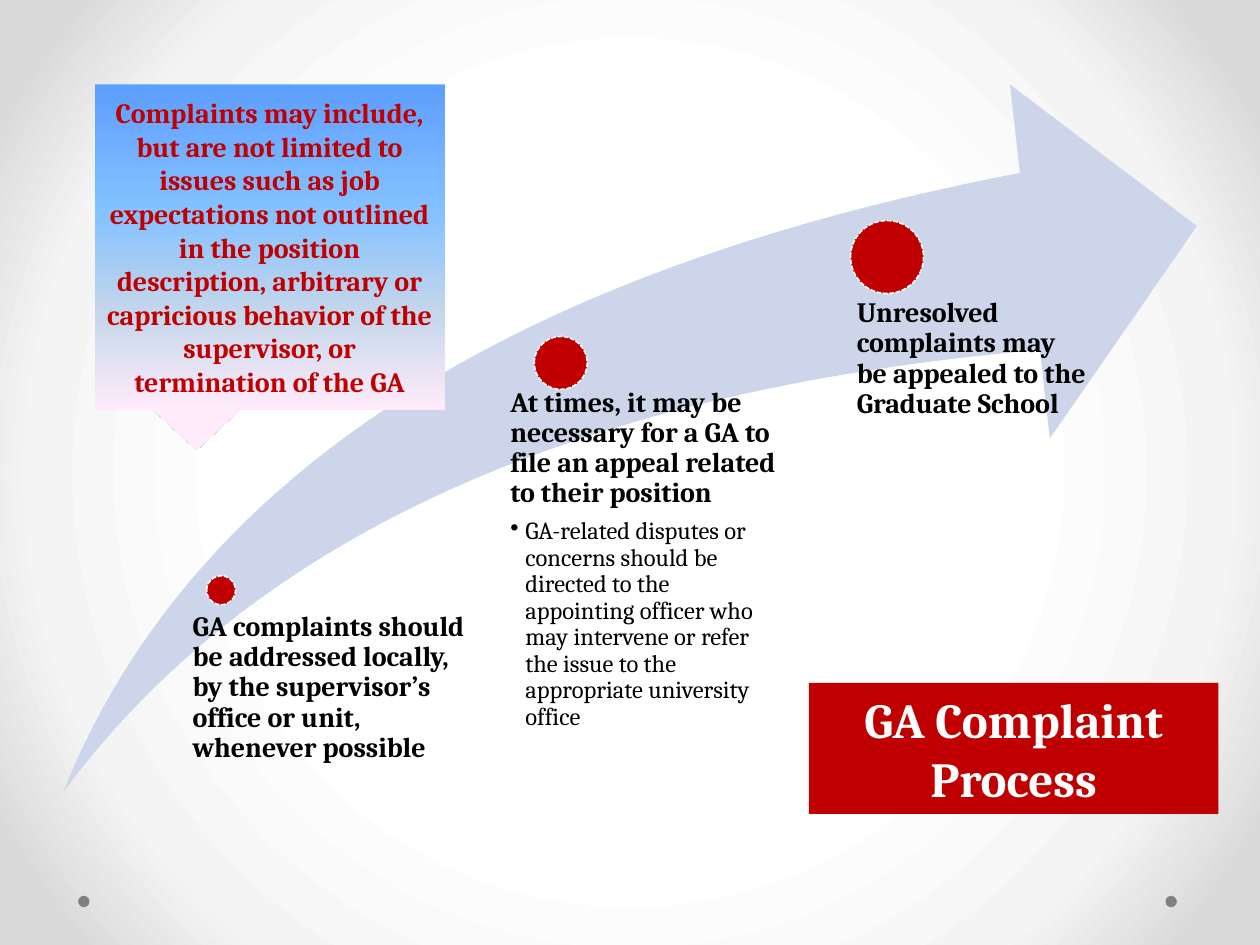
from lxml import etree
from pptx import Presentation
from pptx.dml.color import RGBColor
from pptx.enum.dml import MSO_LINE
from pptx.enum.shapes import MSO_SHAPE as Preset
from pptx.enum.text import MSO_ANCHOR as Anchor, MSO_AUTO_SIZE as AutoSize, PP_ALIGN as Align
from pptx.oxml.ns import qn
from pptx.util import Inches, Pt

RED = RGBColor(0xC0, 0x00, 0x00)
WHITE = RGBColor(0xFF, 0xFF, 0xFF)
BLACK = RGBColor(0x00, 0x00, 0x00)
GRAY = RGBColor(0x80, 0x80, 0x80)
PALE_BLUE = RGBColor(0xCC, 0xD5, 0xEA)
BACKDROP = [(50, WHITE), (76, RGBColor(0xF4, 0xF4, 0xF4)), (92, RGBColor(0xDA, 0xDA, 0xDA))]
SKY = [(0, RGBColor(0x5E, 0x9E, 0xFF)), (40, RGBColor(0x85, 0xC2, 0xFF)),
       (70, RGBColor(0xC4, 0xD6, 0xEB)), (100, RGBColor(0xFF, 0xEB, 0xFA))]


def add_run(paragraph, text, size, color, bold=True):
    run = paragraph.add_run()
    run.text = text
    run.font.name = "Cambria"
    run.font.size = Pt(size)
    run.font.bold = bold
    run.font.color.rgb = color


def make_gradient(solid, stops):
    gradient = etree.Element(qn("a:gradFill"), rotWithShape="1")
    stop_list = etree.SubElement(gradient, qn("a:gsLst"))
    for position, color in stops:
        stop = etree.SubElement(stop_list, qn("a:gs"), pos=str(position * 1000))
        etree.SubElement(stop, qn("a:srgbClr"), val=str(color))
    solid.getparent().replace(solid, gradient)
    return gradient


prs = Presentation()
prs.slide_width, prs.slide_height = Inches(10), Inches(7.5)
slide = prs.slides.add_slide(prs.slide_layouts[5])
shapes = slide.shapes

slide.background.fill.solid()
backdrop = make_gradient(slide.element.find(".//" + qn("a:solidFill")), BACKDROP)
circle = etree.SubElement(backdrop, qn("a:path"), path="circle")
etree.SubElement(circle, qn("a:fillToRect"), l="50000", t="50000", r="50000", b="50000")

for left in (9.25, 0.62):
    corner_dot = shapes.add_shape(Preset.OVAL, Inches(left), Inches(7.11), Inches(0.09), Inches(0.09))
    corner_dot.shadow.inherit = False
    corner_dot.fill.solid()
    corner_dot.fill.fore_color.rgb = GRAY
    corner_dot.line.fill.background()

swoosh = shapes.add_shape(Preset.SWOOSH_ARROW, Inches(0.5), Inches(0.67), Inches(9), Inches(5.62))
swoosh.adjustments[0] = 0.25
swoosh.adjustments[1] = 0.25
swoosh.shadow.inherit = False
swoosh.fill.solid()
swoosh.fill.fore_color.rgb = PALE_BLUE
swoosh.line.fill.background()

steps = [
    ((1.64, 4.57, 0.23), (1.41, 4.86, 2.34, 1.3), 0.12,
     "GA complaints should be addressed locally, by the supervisor’s office or unit, "
     "whenever possible", None),
    ((4.24, 2.67, 0.42), (3.83, 3.08, 2.33, 3.4), 0.22,
     "At times, it may be necessary for a GA to file an appeal related to their position",
     "GA-related disputes or concerns should be directed to the appointing officer who may "
     "intervene or refer the issue to the appropriate university office"),
    ((6.75, 1.75, 0.58), (6.49, 2.37, 2.16, 1.71), 0.31,
     "Unresolved complaints may be appealed to the Graduate School", None),
]
for (left, top, size), text_box, inset, heading, detail in steps:
    marker = shapes.add_shape(Preset.OVAL, Inches(left), Inches(top), Inches(size), Inches(size))
    marker.shadow.inherit = False
    marker.fill.solid()
    marker.fill.fore_color.rgb = RED
    marker.line.color.rgb = WHITE
    marker.line.width = Pt(0.9)
    marker.line.dash_style = MSO_LINE.SQUARE_DOT

    frame = shapes.add_textbox(*[Inches(length) for length in text_box]).text_frame
    frame.word_wrap = True
    frame.margin_left = Inches(inset)
    frame.margin_top = frame.margin_right = frame.margin_bottom = 0
    step = frame.paragraphs[0]
    step.line_spacing = 0.9
    step.space_after = Pt(5.6)
    add_run(step, heading, 16, BLACK)
    if detail:
        bullet = frame.add_paragraph()
        bullet.level = 1
        bullet.line_spacing = 0.9
        bullet.space_after = Pt(2.1)
        props = bullet._p.get_or_add_pPr()
        props.set("marL", str(Inches(0.12)))
        props.set("indent", str(Inches(-0.12)))
        etree.SubElement(props, qn("a:buChar"), char="•")
        add_run(bullet, detail, 14, BLACK, bold=False)

title = shapes.title
title.left, title.top, title.width, title.height = Inches(6.42), Inches(5.42), Inches(3.25), Inches(1.04)
title.fill.solid()
title.fill.fore_color.rgb = RED
title.text_frame.auto_size = AutoSize.NONE
title.text_frame.vertical_anchor = Anchor.TOP
title.text_frame.paragraphs[0].alignment = Align.CENTER
add_run(title.text_frame.paragraphs[0], "GA Complaint Process", 28, WHITE)

callout = shapes.add_shape(Preset.RECTANGULAR_CALLOUT, Inches(0.75), Inches(0.67), Inches(2.78), Inches(2.58))
callout.shadow.inherit = False
callout.line.fill.background()
callout.fill.solid()
sky = make_gradient(callout.element.spPr.find(qn("a:solidFill")), SKY)
etree.SubElement(sky, qn("a:lin"), ang="5400000", scaled="0")
callout.text_frame.vertical_anchor = Anchor.MIDDLE
callout.text_frame.paragraphs[0].alignment = Align.CENTER
add_run(callout.text_frame.paragraphs[0],
        "Complaints may include, but are not limited to issues such as job expectations not "
        "outlined in the position description, arbitrary or capricious behavior of the "
        "supervisor, or termination of the GA", 16, RED)

prs.save("out.pptx")
